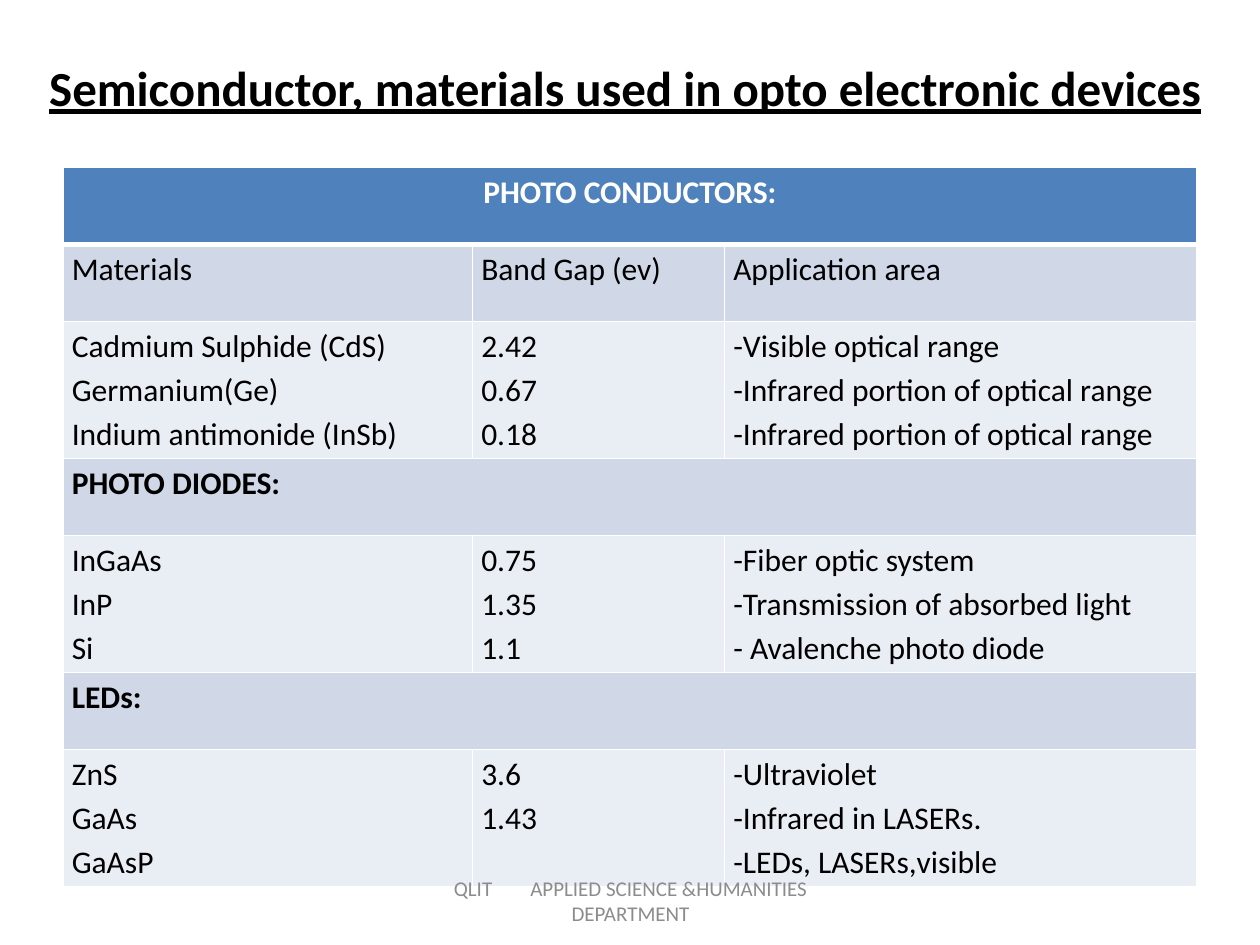
"""Build a slide tabulating semiconductor materials for optoelectronic devices."""
from dataclasses import dataclass

from lxml import etree
from pptx import Presentation
from pptx import util as u
from pptx.dml.color import RGBColor
from pptx.enum import text
from pptx.oxml.ns import qn

W, H = 10, 7.5
COLORS = {"ink": "000000", "white": "FFFFFF", "header": "4F81BD",
          "band": "D0D8E8", "plain": "E9EDF4", "footer": "8C8C8C"}
COLUMNS = (13, 8, 15)
COLUMN_UNIT = W / 40
SHORT_ROW, TALL_ROW = 0.61, 1.09
CELL_MARGINS = {"margin_left": 0.07, "margin_right": 0.07,
                "margin_top": 0, "margin_bottom": 0}
ALIGN = text.PP_ALIGN


@dataclass
class Row:
    cells: tuple[str, ...]
    fill: str
    height: float = SHORT_ROW
    bold: bool = False


@dataclass
class Label:
    pieces: tuple[str, ...]
    box: tuple[float, float, float, float]
    size: int
    color: str
    bold: bool = False
    underline: bool = False
    gap: int = 0


ROWS = [
    Row(("PHOTO CONDUCTORS:",), "header", bold=True),
    Row(("Materials", "Band Gap (ev)", "Application area"), "band"),
    Row(("Cadmium Sulphide (CdS)\nGermanium(Ge)\nIndium antimonide (InSb)",
         "2.42\n0.67\n0.18",
         "-Visible optical range\n-Infrared portion of optical range\n"
         "-Infrared portion of optical range"), "plain", TALL_ROW),
    Row(("PHOTO DIODES:",), "band", bold=True),
    Row(("InGaAs\nInP\nSi", "0.75\n1.35\n1.1",
         "-Fiber optic system\n-Transmission of absorbed light\n"
         "- Avalenche photo diode"), "plain", TALL_ROW),
    Row(("LEDs:",), "band", bold=True),
    Row(("ZnS\nGaAs\nGaAsP", "3.6\n1.43",
         "-Ultraviolet\n-Infrared in LASERs.\n-LEDs, LASERs,visible"),
        "plain", TALL_ROW),
]
LABELS = [
    Label(("Semiconductor, materials used in opto electronic devices",),
          (0.025, 0.04, 0.942, 0.104), 28, "ink", bold=True, underline=True),
    Label(("QLIT", " ", "APPLIED SCIENCE &HUMANITIES DEPARTMENT"),
          (0.342, 0.927, 0.317, 0.053), 12, "footer", gap=19),
]


def rgb(name: str) -> RGBColor:
    """Return the named colour."""
    return RGBColor.from_string(COLORS[name])


def style(r, size: int, color: str, **formats) -> None:
    """Apply the font, size, colour and further formats to a run."""
    formats = {"name": "Calibri", "size": u.Pt(size), **formats}
    for key, value in formats.items():
        setattr(r.font, key, value)
    r.font.color.rgb = rgb(color)


def draw_label(s, label: Label) -> None:
    """Draw a centred text box placed by shares of the slide."""
    x, y, w, h = label.box
    sp = s.shapes.add_textbox(*map(u.Inches, (x * W, y * H, w * W, h * H)))
    tf = sp.text_frame
    tf.word_wrap = True
    tf.vertical_anchor = text.MSO_ANCHOR.MIDDLE
    p = tf.paragraphs[0]
    p.alignment = ALIGN.CENTER
    for piece in label.pieces:
        r = p.add_run()
        r.text = piece
        style(r, label.size, label.color, bold=label.bold, underline=label.underline)
        if piece == " ":
            r.font._element.set("spc", str(label.gap * 100))


def draw_borders(cell, top: float, bottom: float) -> None:
    """Give a cell white borders with the given top and bottom widths."""
    tc_pr = cell._tc.get_or_add_tcPr()
    for side, width in {"L": 1, "R": 1, "T": top, "B": bottom}.items():
        ln = etree.SubElement(tc_pr, qn(f"a:ln{side}"), w=str(u.Pt(width)))
        fill = etree.SubElement(ln, qn("a:solidFill"))
        etree.SubElement(fill, qn("a:srgbClr"), val=COLORS["white"])


def fill_cell(cell, content: str, row: Row) -> None:
    """Write the lines of one cell in its row's format."""
    header = row.fill == "header"
    if not header:
        for key, value in CELL_MARGINS.items():
            setattr(cell, key, u.Inches(value))
    tf = cell.text_frame
    tf.text = content
    for p in tf.paragraphs:
        p.alignment = ALIGN.CENTER if header else ALIGN.JUSTIFY
        p.line_spacing = 1.0 if header else 1.15
        for r in p.runs:
            style(r, 18, "white" if header else "ink", bold=row.bold)


def draw_table(s, rows: list[Row]) -> None:
    """Draw the materials table, merging rows that hold one cell."""
    box = (0.05 * W, 1.33, sum(COLUMNS) * COLUMN_UNIT, sum(row.height for row in rows))
    table = s.shapes.add_table(len(rows), len(COLUMNS), *map(u.Inches, box)).table
    for column, units in zip(table.columns, COLUMNS):
        column.width = u.Inches(units * COLUMN_UNIT)
    for i, row in enumerate(rows):
        table.rows[i].height = u.Inches(row.height)
        for cell in table.rows[i].cells:
            draw_borders(cell, 3 if i == 1 else 1, 3 if i == 0 else 1)
            cell.fill.solid()
            cell.fill.fore_color.rgb = rgb(row.fill)
        for j, content in enumerate(row.cells):
            fill_cell(table.cell(i, j), content, row)
        if len(row.cells) == 1:
            table.cell(i, 0).merge(table.cell(i, len(COLUMNS) - 1))


def main() -> None:
    """Build and save the slide."""
    prs = Presentation()
    prs.slide_width, prs.slide_height = u.Inches(W), u.Inches(H)
    s = prs.slides.add_slide(prs.slide_layouts[6])
    title, footer = LABELS
    draw_label(s, title)
    draw_table(s, ROWS)
    draw_label(s, footer)
    prs.save("out.pptx")


if __name__ == "__main__":
    main()
